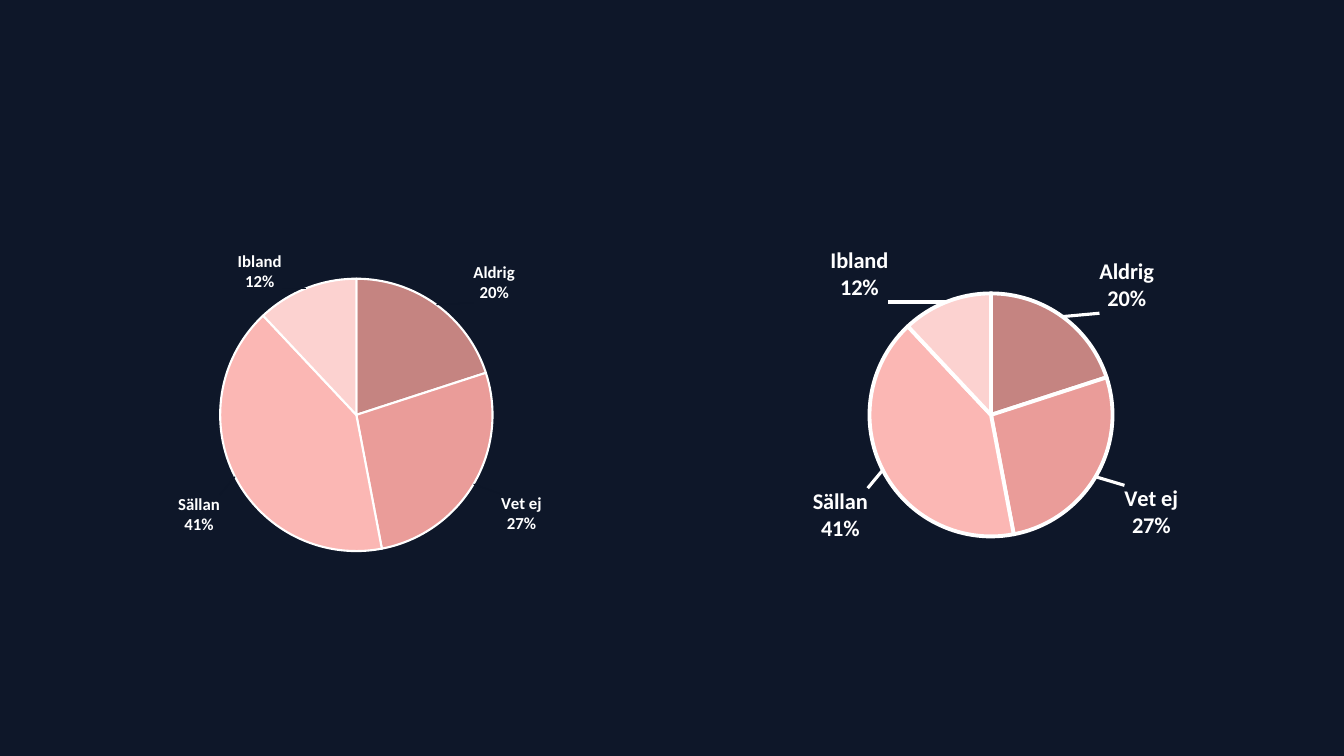
from dataclasses import dataclass

from pptx import Presentation
from pptx.chart.data import CategoryChartData
from pptx.dml.color import RGBColor
from pptx.enum.chart import XL_CHART_TYPE, XL_LABEL_POSITION
from pptx.oxml import parse_xml
from pptx.oxml.ns import nsdecls, qn
from pptx.util import Pt


@dataclass(frozen=True)
class Theme:
    background: str = "0E1729"
    ink: str = "0D1628"
    light: str = "FFFFFF"
    slices: tuple = ("C58481", "EA9C99", "FBB7B4", "FCD2D0")
    font: str = "Calibri"
    base_size: int = 10
    small_label: int = 12
    large_label: int = 16


THEME = Theme()
ANSWERS = {"Aldrig": 0.2, "Vet ej": 0.27, "Sällan": 0.41, "Ibland": 0.12}
PIE_SIZE = (366.5, 248.4)

# Lengths in points; label shifts are measured from the outside-end position
PIES = [
    {"box": (69.8, 160.6, *PIE_SIZE), "centre": (184.8, 135.8), "radius": 97.3,
     "label_size": THEME.small_label, "outline": 1.5,
     "leader": THEME.ink, "leader_width": 0.75,
     "shifts": [(24, 2), (16, 5), (-7, 11), (-16, 6)]},
    {"box": (523.4, 160.6, *PIE_SIZE), "centre": (184.5, 135.8), "radius": 86.8,
     "label_size": THEME.large_label, "outline": 2.75,
     "leader": THEME.light, "leader_width": 2.25,
     "shifts": [(24, 1), (17, 4), (-7, 11), (-40, 4)]},
]


def rgb(colour):
    return RGBColor.from_string(colour)


def style_font(font, size, colour, bold):
    formats = {"name": THEME.font, "size": Pt(size), "bold": bold}
    for attribute, value in formats.items():
        setattr(font, attribute, value)
    font.color.rgb = rgb(colour)


def manual_layout(fractions, inner=False):
    """Return a chart layout from fractions of the chart's size."""
    target = '<c:layoutTarget val="inner"/>' if inner else ""
    modes = '<c:xMode val="edge"/><c:yMode val="edge"/>' if inner else ""
    values = "".join(f'<c:{key} val="{value:.4f}"/>'
                     for key, value in fractions.items())
    return parse_xml(f'<c:layout {nsdecls("c")}><c:manualLayout>'
                     f'{target}{modes}{values}</c:manualLayout></c:layout>')


def place_plot(chart, width, height, centre, radius):
    plot_area = chart._chartSpace.chart.plotArea
    for layout in plot_area.findall(qn("c:layout")):
        plot_area.remove(layout)
    plot_area.insert(0, manual_layout({
        "x": (centre[0] - radius) / width, "y": (centre[1] - radius) / height,
        "w": 2 * radius / width, "h": 2 * radius / height}, inner=True))


def show_on_two_lines(label):
    """Show category above value in a label or a set of labels."""
    label.find(qn("c:showCatName")).set("val", "1")
    separator = parse_xml(f'<c:separator {nsdecls("c")}>\n</c:separator>')
    last_flag = label.find(qn("c:showBubbleSize"))
    if last_flag is None:
        last_flag = label.find(qn("c:showPercent"))
    last_flag.addnext(separator)


def add_leader_lines(labels, colour, width):
    for tag in ("c:showLeaderLines", "c:leaderLines"):
        for old in labels.findall(qn(tag)):
            labels.remove(old)
    labels.append(parse_xml(f'<c:showLeaderLines {nsdecls("c")} val="1"/>'))
    labels.append(parse_xml(
        f'<c:leaderLines {nsdecls("c", "a")}><c:spPr><a:ln w="{Pt(width)}">'
        f'<a:solidFill><a:srgbClr val="{colour}"/></a:solidFill></a:ln>'
        '</c:spPr></c:leaderLines>'))


def add_answer_pie(slide, box, centre, radius, label_size, outline,
                   leader, leader_width, shifts):
    left, top, width, height = box
    answers = CategoryChartData(number_format="0%")
    answers.categories = list(ANSWERS)
    answers.add_series("Series 1", list(ANSWERS.values()))
    chart = slide.shapes.add_chart(
        XL_CHART_TYPE.PIE, *[Pt(length) for length in box], answers).chart
    for attribute in ("has_title", "has_legend"):
        setattr(chart, attribute, False)
    style_font(chart.font, THEME.base_size, THEME.ink, False)
    place_plot(chart, width, height, centre, radius)
    pie = chart.plots[0]
    pie.vary_by_categories = True
    series = pie.series[0]

    # Shared label style
    labels = series.data_labels
    formats = {"number_format": "0%", "number_format_is_linked": False,
               "show_value": True, "show_category_name": True,
               "position": XL_LABEL_POSITION.OUTSIDE_END}
    for attribute, value in formats.items():
        setattr(labels, attribute, value)
    style_font(labels.font, label_size, THEME.light, True)
    show_on_two_lines(labels._element)
    add_leader_lines(labels._element, leader, leader_width)

    # Slices and their labels
    for index, (colour, (dx, dy)) in enumerate(zip(THEME.slices, shifts)):
        piece = series.points[index]
        piece.format.fill.solid()
        piece.format.fill.fore_color.rgb = rgb(colour)
        piece.format.line.color.rgb = rgb(THEME.light)
        piece.format.line.width = Pt(outline)
        label = piece.data_label
        label.position = XL_LABEL_POSITION.OUTSIDE_END
        style_font(label.font, label_size, THEME.light, True)
        label_xml = labels._element.findall(qn("c:dLbl"))[index]
        show_on_two_lines(label_xml)
        label_xml.find(qn("c:idx")).addnext(
            manual_layout({"x": dx / width, "y": dy / height}))


def main():
    deck = Presentation()
    deck.slide_width, deck.slide_height = Pt(960), Pt(540)
    slide = deck.slides.add_slide(deck.slide_layouts[6])
    slide.background.fill.solid()
    slide.background.fill.fore_color.rgb = rgb(THEME.background)
    for pie in PIES:
        add_answer_pie(slide, **pie)
    deck.save("out.pptx")


if __name__ == "__main__":
    main()
